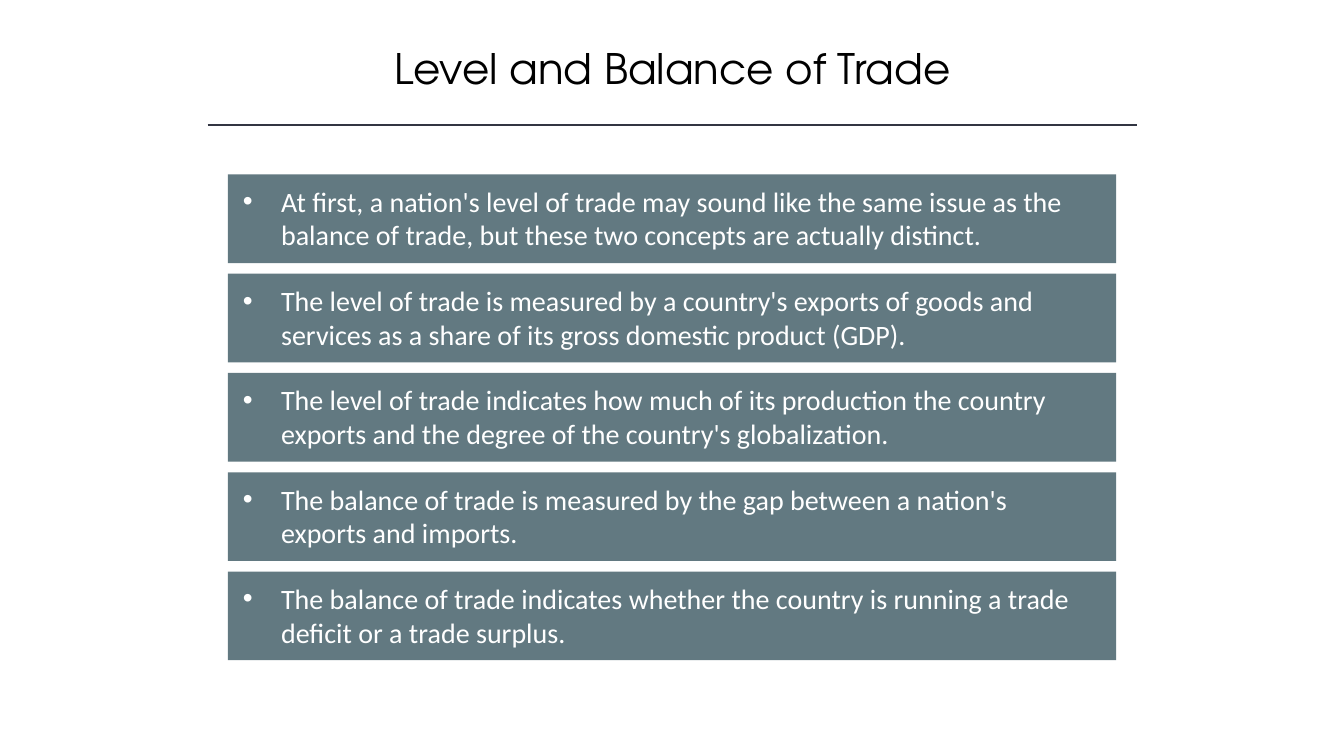
from lxml import etree
from pptx import Presentation
from pptx import util as u
from pptx.dml.color import RGBColor
from pptx.enum import shapes, text
from pptx.oxml.ns import qn

TITLE = "Level and Balance of Trade"
POINTS = [
    "At first, a nation's level of trade may sound like the same issue as the balance of trade, but these two concepts are actually distinct.",
    "The level of trade is measured by a country's exports of goods and services as a share of its gross domestic product (GDP).",
    "The level of trade indicates how much of its production the country exports and the degree of the country's globalization.",
    "The balance of trade is measured by the gap between a nation's exports and imports.",
    "The balance of trade indicates whether the country is running a trade deficit or a trade surplus.",
]
SLATE, INK, WHITE, BLACK = "627981", "323542", "FFFFFF", "000000"
BAR_LEFT, BAR_WIDTH, BAR_HEIGHT = 2.26, 8.81, 0.88
FIRST_TOP, LAST_TOP = 1.73, 5.67
TEXT_INSET, TEXT_WIDTH, TEXT_HEIGHT = 0.05, 8.54, 0.77
INDENT = 0.38


def color(value):
    return RGBColor.from_string(value)


def add_bar(page, left, top, width, height):
    bar = page.shapes.add_shape(
        shapes.MSO_SHAPE.RECTANGLE, *map(u.Inches, (left, top, width, height)))
    bar.shadow.inherit = False
    bar.fill.solid()
    bar.fill.fore_color.rgb = color(SLATE)
    bar.line.fill.background()
    return bar


def write(box, words, size, font, ink, align=text.PP_ALIGN.LEFT, bullet=None):
    frame = box.text_frame
    frame.word_wrap = True
    frame.vertical_anchor = text.MSO_ANCHOR.TOP
    para = frame.paragraphs[0]
    para.alignment = align
    if bullet:
        props = para._p.get_or_add_pPr()
        props.set("marL", str(u.Inches(INDENT)))
        props.set("indent", str(-u.Inches(INDENT)))
        etree.SubElement(props, qn("a:buFont"), typeface="Arial")
        etree.SubElement(props, qn("a:buChar"), char=bullet)
    span = para.add_run()
    span.text = words
    span.font.size = u.Pt(size)
    span.font.name = font
    span.font.color.rgb = color(ink)


deck = Presentation()
deck.slide_width, deck.slide_height = u.Inches(13.33), u.Inches(7.5)
page = deck.slides.add_slide(deck.slide_layouts[6])

title = page.shapes.add_textbox(*map(u.Inches, (1.67, 0.37, 10, 0.61)))
write(title, TITLE, 30, "TeX Gyre Adventor", BLACK, align=text.PP_ALIGN.CENTER)

rule = page.shapes.add_connector(
    shapes.MSO_CONNECTOR.STRAIGHT, *map(u.Inches, (2.06, 1.24, 11.28, 1.24)))
rule.line.color.rgb = color(INK)
rule.line.width = u.Pt(1)
etree.SubElement(rule._element.spPr, qn("a:effectLst"))

pitch = (LAST_TOP - FIRST_TOP) / (len(POINTS) - 1)
for index, point in enumerate(POINTS):
    top = FIRST_TOP + index * pitch
    add_bar(page, BAR_LEFT, top, BAR_WIDTH, BAR_HEIGHT)
    label = add_bar(page, BAR_LEFT + TEXT_INSET, top + TEXT_INSET, TEXT_WIDTH, TEXT_HEIGHT)
    write(label, point, 20, "Calibri", WHITE, bullet="•")
    label.text_frame.auto_size = text.MSO_AUTO_SIZE.SHAPE_TO_FIT_TEXT

deck.save("out.pptx")
